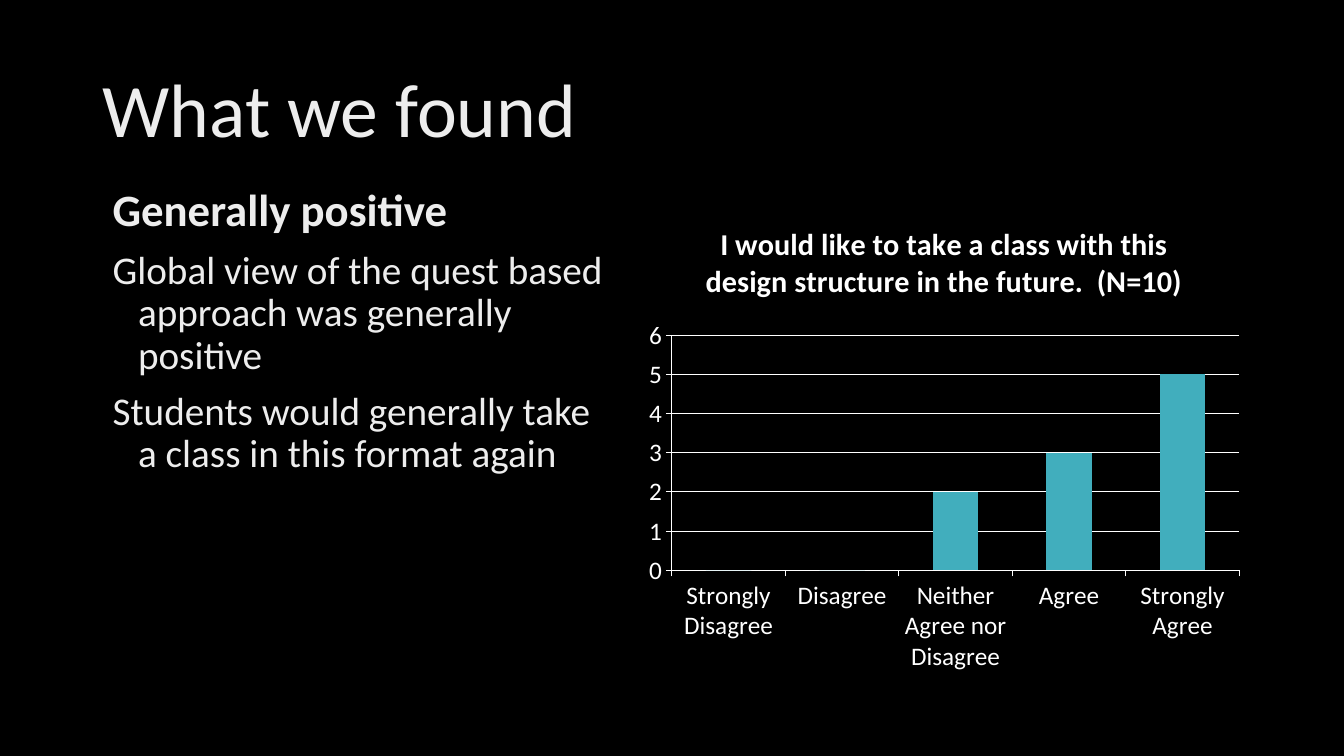
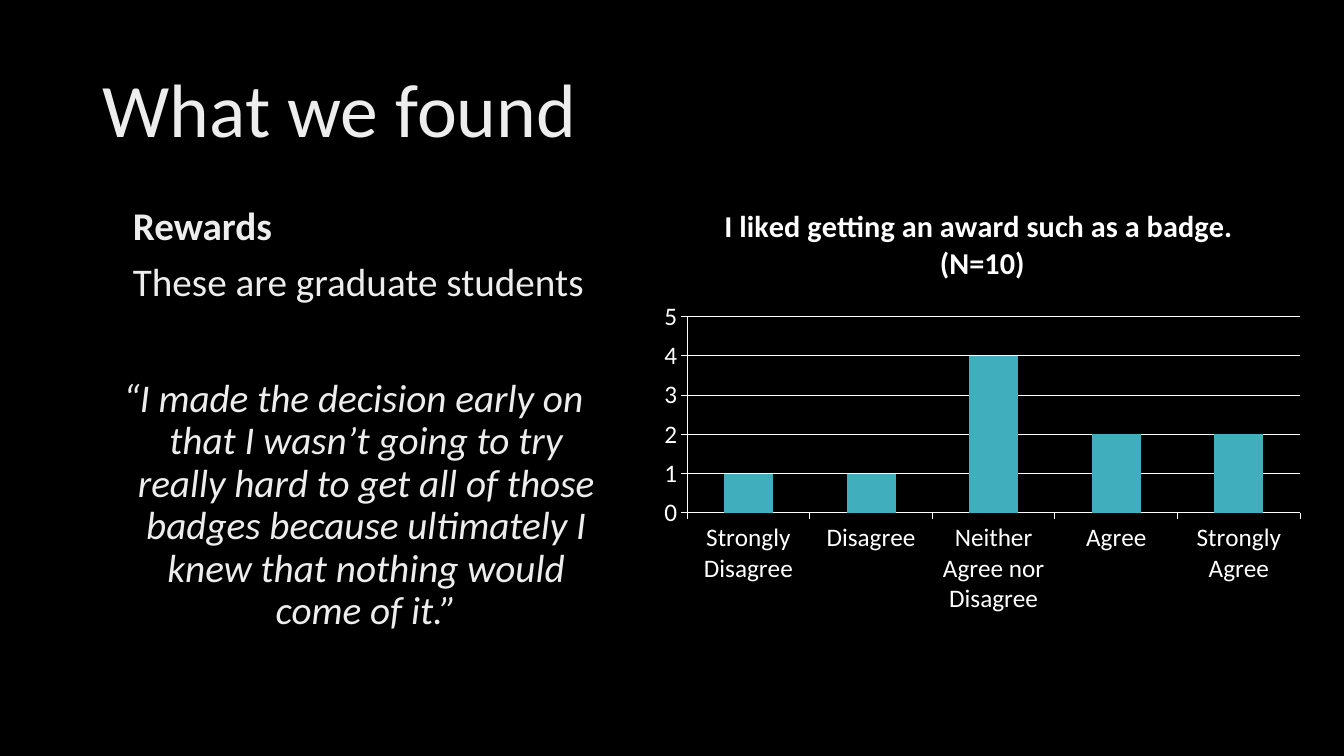
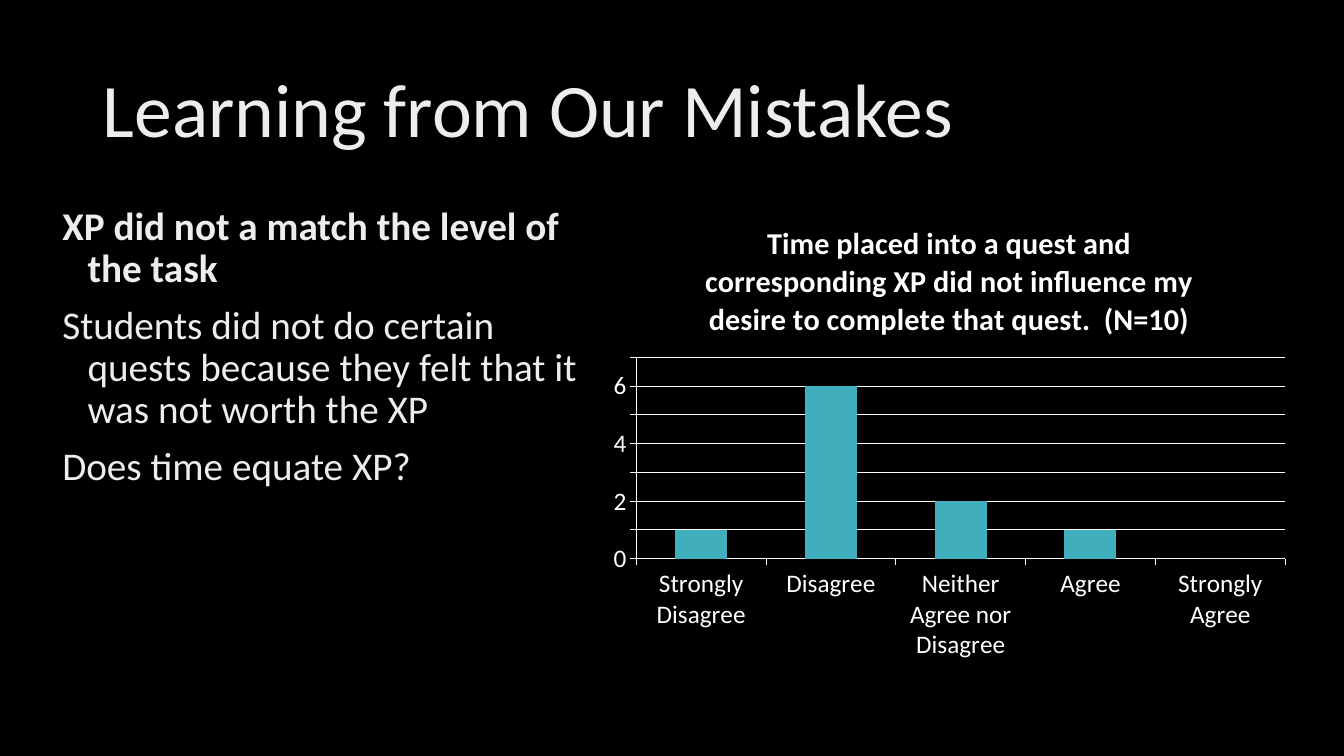
from pptx import Presentation
from pptx.chart.data import CategoryChartData
from pptx.dml.color import RGBColor
from pptx.enum.chart import XL_CHART_TYPE as ChartType, XL_TICK_MARK as TickMark
from pptx.enum.text import MSO_ANCHOR as Anchor, PP_ALIGN as Align
from pptx.util import Cm, Pt

FONT = "Calibri"
BLACK, WHITE, PALE, TEAL = "000000", "FFFFFF", "EDEDED", "41AEBD"
TITLE_BOX = (2.34, 1.02, 29.21, 3.68)
HANGING_INDENT = Cm(0.64)
ANSWERS = ["Strongly Disagree", "Disagree", "Neither Agree nor Disagree", "Agree", "Strongly Agree"]

SLIDES = [
    {
        "title": "What we found",
        "heading": ("Generally positive", 32),
        "points": [
            "Global view of the quest based approach was generally positive",
            "Students would generally take a class in this format again",
        ],
        "text_box": (2.59, 4.62, 13.11, 12.09),
        "question": "I would like to take a class with this design structure in the future.  (N=10)",
        "votes": (0, 0, 2, 3, 5),
        "chart_box": (16.05, 5.08, 15.49, 12.09),
    },
    {
        "title": "What we found",
        "heading": ("Rewards", 28),
        "points": ["These are graduate students"],
        "text_box": (3.1, 5.08, 13.97, 12.09),
        "quote": "“I made the decision early on that I wasn’t going to try really hard to get all of "
                 "those badges because ultimately I knew that nothing would come of it.”",
        "quote_box": (2.39, 9.42, 13.03, 8.23),
        "question": "I liked getting an award such as a badge.  (N=10)",
        "votes": (1, 1, 4, 2, 2),
        "chart_box": (16.41, 4.65, 16.69, 11.05),
    },
    {
        "title": "Learning from Our Mistakes",
        "heading": ("XP did not a match the level of the task", 28),
        "points": [
            "Students did not do certain quests because they felt that it was not worth the XP",
            "Does time equate XP?",
        ],
        "text_box": (1.32, 5.08, 13.46, 12.09),
        "question": "Time placed into a quest and corresponding XP did not influence my desire "
                    "to complete that quest.  (N=10)",
        "votes": (1, 6, 2, 1, 0),
        "chart_box": (15.11, 5.08, 17.63, 11.79),
    },
]


def color(value):
    return RGBColor.from_string(value)


def place(box):
    return [Cm(length) for length in box]


def set_font(font, size, value=PALE, bold=False, italic=False):
    font.name, font.size, font.bold, font.italic = FONT, Pt(size), bold, italic
    font.color.rgb = color(value)


def add_text(slide, box, lines, hanging=True, align=Align.LEFT, anchor=Anchor.TOP):
    text_frame = slide.shapes.add_textbox(*place(box)).text_frame
    text_frame.word_wrap = True
    text_frame.vertical_anchor = anchor
    text_frame.text = "\n".join(text for text, _ in lines)
    for index, (paragraph, (_, style)) in enumerate(zip(text_frame.paragraphs, lines)):
        paragraph.alignment = align
        paragraph.line_spacing = 0.9
        if index:
            paragraph.space_before = Pt(10)
        if hanging:
            properties = paragraph._p.get_or_add_pPr()
            properties.set("marL", str(HANGING_INDENT))
            properties.set("indent", str(-HANGING_INDENT))
        set_font(paragraph.runs[0].font, **style)


def add_votes_chart(slide, box, question, votes):
    data = CategoryChartData()
    data.categories = ANSWERS
    data.add_series("Series 1", votes)
    chart = slide.shapes.add_chart(ChartType.COLUMN_CLUSTERED, *place(box), data).chart
    set_font(chart.font, 18, WHITE)
    chart.has_legend = False
    chart.has_title = True
    chart.chart_title.text_frame.text = question
    set_font(chart.chart_title.text_frame.paragraphs[0].runs[0].font, 21.6, WHITE, bold=True)

    plot = chart.plots[0]
    plot.gap_width = 150
    plot.vary_by_categories = False
    fill = plot.series[0].format.fill
    fill.solid()
    fill.fore_color.rgb = color(TEAL)

    value_axis = chart.value_axis
    value_axis.minimum_scale, value_axis.maximum_scale = 0, max(votes) + 1
    value_axis.major_unit = 1
    value_axis.has_major_gridlines = True
    for axis in (chart.category_axis, value_axis):
        axis.major_tick_mark = TickMark.OUTSIDE
    for part in (chart.category_axis, value_axis, value_axis.major_gridlines):
        part.format.line.color.rgb = color(WHITE)
        part.format.line.width = Pt(0.75)


def build_slide(presentation, content):
    slide = presentation.slides.add_slide(presentation.slide_layouts[6])
    add_text(slide, TITLE_BOX, [(content["title"], {"size": 54})], hanging=False, anchor=Anchor.MIDDLE)
    heading, size = content["heading"]
    lines = [(heading, {"size": size, "bold": True})]
    lines += [(point, {"size": 28}) for point in content["points"]]
    add_text(slide, content["text_box"], lines)
    if "quote" in content:
        quote = (content["quote"], {"size": 28, "italic": True})
        add_text(slide, content["quote_box"], [quote], align=Align.CENTER)
    add_votes_chart(slide, content["chart_box"], content["question"], content["votes"])


def main():
    """Build the survey findings slides."""
    presentation = Presentation()
    presentation.slide_width, presentation.slide_height = Cm(33.87), Cm(19.05)
    background = presentation.slide_master.background.fill
    background.solid()
    background.fore_color.rgb = color(BLACK)
    for content in SLIDES:
        build_slide(presentation, content)
    presentation.save("out.pptx")


if __name__ == "__main__":
    main()
